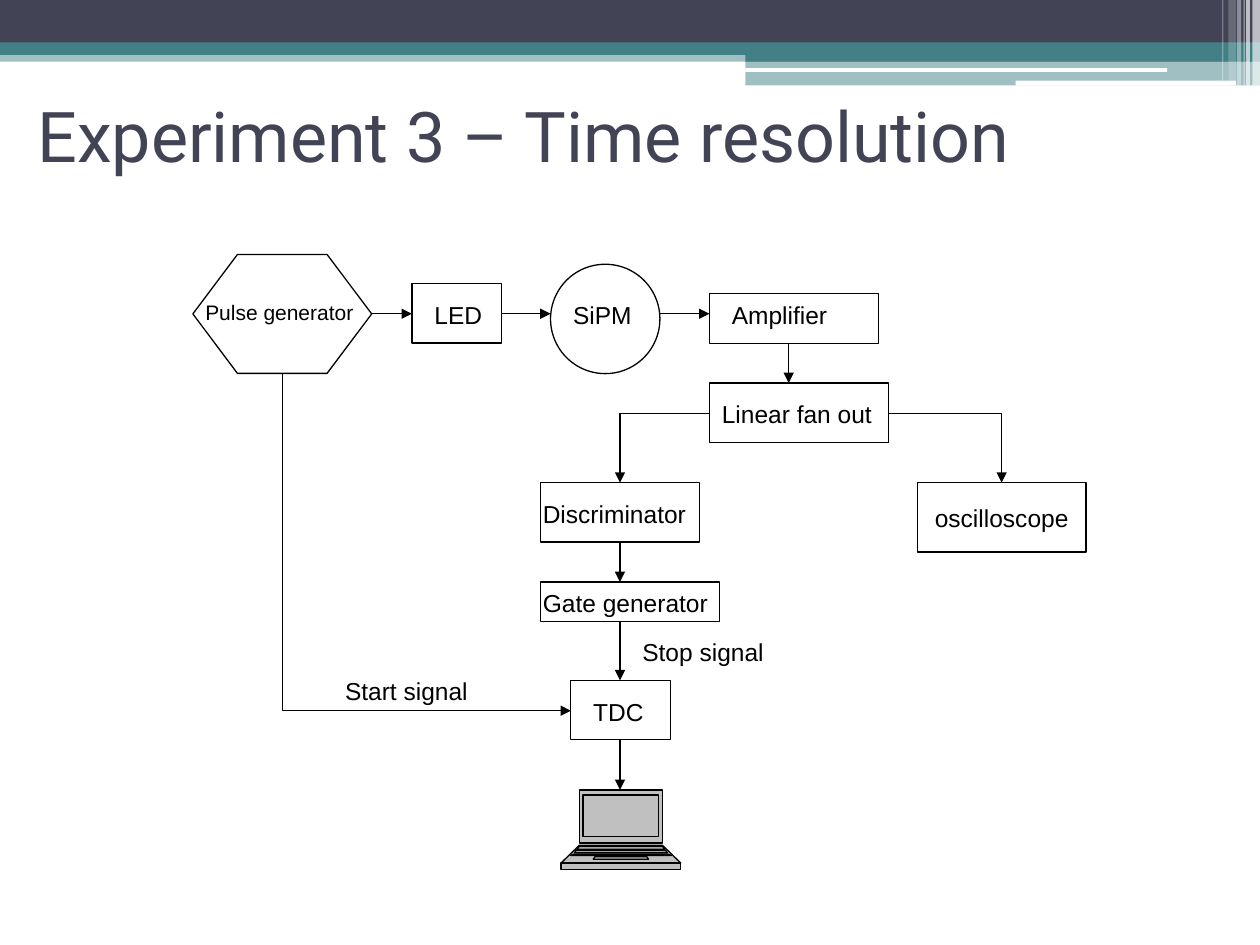
from dataclasses import dataclass

from lxml import etree
from pptx import Presentation
from pptx import util as u
from pptx.dml.color import RGBColor
from pptx.enum import shapes, text
from pptx.oxml import ns

Pt = u.Pt
KIND = shapes.MSO_SHAPE


@dataclass(frozen=True)
class Theme:
    navy: str = "424456"
    teal: str = "438086"
    white: str = "FFFFFF"
    black: str = "000000"
    grey: str = "C0C0C0"
    title_font: str = "Roboto"
    body_font: str = "Arial"
    title_size: float = 40
    label_size: float = 14
    small_size: float = 12
    line_width: float = 0.75


THEME = Theme()

# Header: kind, left, top, width, height, colour, opacity in percent
BANDS = [
    (KIND.RECTANGLE, 0, 28.8, 720, 6.5, THEME.teal, 50),
    (KIND.RECTANGLE, 0, 0, 720, 24.5, THEME.navy, 100),
    (KIND.RECTANGLE, 0, 24.2, 720, 7.2, THEME.teal, 100),
    (KIND.RECTANGLE, 426, 28.1, 294, 7.2, THEME.teal, 100),
    (KIND.RECTANGLE, 426, 34.6, 294, 14.2, THEME.teal, 50),
    (KIND.ROUNDED_RECTANGLE, 425.5, 38.9, 241.5, 2.2, THEME.white, 100),
    (KIND.ROUNDED_RECTANGLE, 580.3, 46.1, 126, 2.9, THEME.white, 100),
]
# Light stripes at the right end of the header: left, width, height, opacity
STRIPES = [
    (715.7, 4.3, 49, 65), (712.1, 2.2, 49, 65), (710.6, 0.7, 49, 60),
    (707, 2.2, 49, 40), (702, 4.3, 46.1, 20), (698.4, 0.7, 46.1, 30),
]
# Diagram blocks: kind, left, top, width, height
BLOCKS = {
    "pulse generator": (KIND.HEXAGON, 110.2, 145.4, 102.2, 68),
    "led": (KIND.RECTANGLE, 235.4, 162, 51.1, 34),
    "sipm": (KIND.OVAL, 314.6, 151, 62.5, 62.5),
    "amplifier": (KIND.RECTANGLE, 405.4, 167.8, 96.5, 28.4),
    "fan out": (KIND.RECTANGLE, 405.4, 218.9, 102.2, 34),
    "oscilloscope": (KIND.RECTANGLE, 524.2, 275.8, 96.5, 39.6),
    "discriminator": (KIND.RECTANGLE, 308.9, 275.8, 90.7, 34),
    "gate generator": (KIND.RECTANGLE, 308.9, 332.6, 102.2, 22.5),
    "tdc": (KIND.RECTANGLE, 326, 388.8, 57, 34),
}
# Labels: words, left, top, width
LABELS = [
    ("SiPM", 320.4, 167.8, 90.7), ("Linear fan out", 405.4, 224.6, 124.6),
    ("Discriminator", 303.1, 281.5, 124.6), ("Gate generator", 303.1, 332.6, 141.8),
    ("TDC", 331.9, 394.6, 45.4), ("Amplifier", 411.1, 167.8, 96.5),
    ("LED", 241.2, 167.8, 90.7), ("Start signal", 190.1, 383, 108),
    ("Stop signal", 360, 360.7, 108),
]
FLOW_Y, TRUNK_X, FAN_Y = 179.3, 354.3, 236.2
# Straight arrows: from x, from y, to x, to y
ARROWS = [(x1, FLOW_Y, x2, FLOW_Y) for x1, x2 in
          [(212.4, 235.4), (286.6, 314.6), (377.3, 405.4)]]
ARROWS += [(450.7, 196.6, 450.7, 218.9)]
ARROWS += [(TRUNK_X, y1, TRUNK_X, y2) for y1, y2 in
           [(309.6, 332.6), (355, 388.8), (422.8, 451.4)]]
# Arrows that run sideways, then down
ELBOWS = [(507.6, FAN_Y, 572.4, 275.8), (405.4, FAN_Y, TRUNK_X, 275.8)]
START_SIGNAL = (161.3, 213.1, 326.2, 406.1)
# Laptop parts, symmetric: half width at top, top, half width at bottom, bottom
LAPTOP_X = 354.8
LAPTOP = [
    (23.8, 451.4, 23.8, 481.7), (23.8, 483.1, 34.2, 493.2),
    (34.2, 493.2, 34.2, 496.8), (21.6, 454.3, 21.6, 478.1),
    (23.8, 483.8, 25.2, 485.3), (14.8, 489.6, 15.8, 491),
    (25.6, 486, 26.6, 487.4), (27.4, 488.2, 28.8, 488.9),
]


def assign(target, values):
    for name, value in values.items():
        setattr(target, name, value)


def paint(shape, fill=None, opacity=100, outlined=False):
    shape.shadow.inherit = False
    if fill:
        shape.fill.solid()
        shape.fill.fore_color.rgb = RGBColor.from_string(fill)
        if opacity < 100:
            colour = shape.fill._xPr.find(".//" + ns.qn("a:srgbClr"))
            etree.SubElement(colour, ns.qn("a:alpha"), val=str(opacity * 1000))
    else:
        shape.fill.background()
    if outlined:
        stroke(shape.line)
    else:
        shape.line.fill.background()


def stroke(line):
    line.width = Pt(THEME.line_width)
    line.color.rgb = RGBColor.from_string(THEME.black)


def add_block(page, kind, *place, **look):
    shape = page.shapes.add_shape(kind, *map(Pt, place))
    paint(shape, **look)
    return shape


def write(shape, words, size=THEME.label_size, font=THEME.body_font,
          colour=THEME.black, align=text.PP_ALIGN.LEFT, **frame_values):
    frame = shape.text_frame
    assign(frame, {"word_wrap": True, **frame_values})
    para = frame.paragraphs[0]
    para.alignment = align
    span = para.add_run()
    span.text = words
    assign(span.font, {"size": Pt(size), "name": font})
    span.font.color.rgb = RGBColor.from_string(colour)


def add_label(page, words, *place, **look):
    box = page.shapes.add_textbox(*map(Pt, place))
    write(box, words, **look)


def add_arrow(page, *ends, preset="line"):
    arrow = page.shapes.add_connector(shapes.MSO_CONNECTOR.STRAIGHT, *map(Pt, ends))
    stroke(arrow.line)
    properties = arrow._element.spPr
    properties.find(ns.qn("a:prstGeom")).set("prst", preset)
    etree.SubElement(properties.find(ns.qn("a:ln")), ns.qn("a:tailEnd"), type="triangle")
    etree.SubElement(properties, ns.qn("a:effectLst"))
    return arrow


def add_down_then_right(page, x1, y1, x2, y2):
    # A quarter turn about the centre swaps the half width and half height
    x, y, half_w, half_h = (x1 + x2) / 2, (y1 + y2) / 2, (y2 - y1) / 2, (x2 - x1) / 2
    arrow = add_arrow(page, x - half_w, y - half_h, x + half_w, y + half_h,
                      preset="bentConnector2")
    frame = arrow._element.spPr.find(ns.qn("a:xfrm"))
    for name, value in {"rot": "16200000", "flipH": "1"}.items():
        frame.set(name, value)


def add_laptop(page):
    outlines = [[(Pt(LAPTOP_X + side), Pt(y)) for side, y in
                 [(-upper, top), (upper, top), (lower, bottom), (-lower, bottom)]]
                for upper, top, lower, bottom in LAPTOP]
    builder = page.shapes.build_freeform(*outlines[0][0])
    for index, outline in enumerate(outlines):
        if index:
            builder.move_to(*outline[0])
        builder.add_line_segments(outline[1:], close=True)
    laptop = builder.convert_to_shape()
    # Give every outline its own path, so that overlaps stay filled
    track = laptop._element.spPr.find(".//" + ns.qn("a:path"))
    tracks = track.getparent()
    for step in list(track):
        if step.tag == ns.qn("a:moveTo"):
            part = etree.SubElement(tracks, track.tag, dict(track.attrib))
        part.append(step)
    tracks.remove(track)
    paint(laptop, fill=THEME.grey, outlined=True)


def add_header(page):
    for kind, *place, colour, opacity in BANDS:
        add_block(page, kind, *place, fill=colour, opacity=opacity)
    for left, width, height, opacity in STRIPES:
        add_block(page, KIND.RECTANGLE, left, 0, width, height,
                  fill=THEME.white, opacity=opacity)
    add_label(page, "Experiment 3 – Time resolution", 14.4, 31.7, 648, 90,
              size=THEME.title_size, font=THEME.title_font, colour=THEME.navy,
              vertical_anchor=text.MSO_ANCHOR.MIDDLE)


def add_diagram(page):
    blocks = {name: add_block(page, *block, outlined=True)
              for name, block in BLOCKS.items()}
    blocks["pulse generator"].adjustments[0] = 0.375
    write(blocks["oscilloscope"], "oscilloscope", align=text.PP_ALIGN.CENTER,
          word_wrap=False, vertical_anchor=text.MSO_ANCHOR.MIDDLE)
    for words, left, top, width in LABELS:
        add_label(page, words, left, top, width, 24)
    # The small label spans the hexagon, wide enough for one line
    add_label(page, "Pulse generator", 110.2, 167.8, 102.2, 21.6,
              size=THEME.small_size)
    add_laptop(page)
    for ends in ARROWS:
        add_arrow(page, *ends)
    for ends in ELBOWS:
        add_arrow(page, *ends, preset="bentConnector2")
    add_down_then_right(page, *START_SIGNAL)


def main():
    deck = Presentation()
    assign(deck, {"slide_width": Pt(720), "slide_height": Pt(540)})
    page = deck.slides.add_slide(deck.slide_layouts[6])
    add_header(page)
    add_diagram(page)
    deck.save("out.pptx")


if __name__ == "__main__":
    main()
